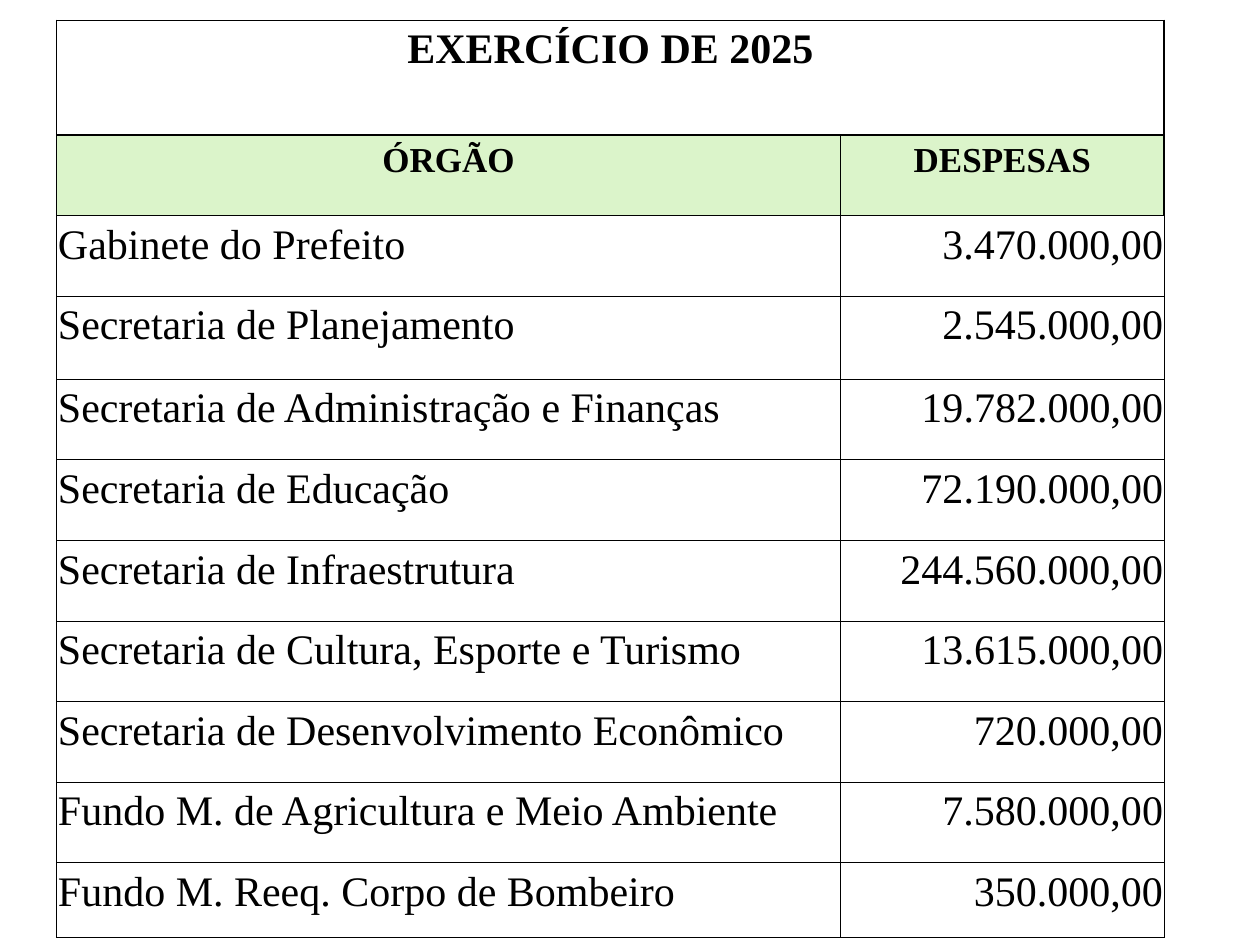
from lxml.etree import SubElement
from pptx import Presentation
from pptx.dml.color import RGBColor
from pptx.enum.text import PP_ALIGN as Align
from pptx.oxml.ns import qn
from pptx.util import Inches, Pt

TITLE = "EXERCÍCIO DE 2025"
HEADS = ("ÓRGÃO", "DESPESAS")
COSTS = [
    ("Gabinete do Prefeito", "3.470.000,00"),
    ("Secretaria de Planejamento", "2.545.000,00"),
    ("Secretaria de Administração e Finanças", "19.782.000,00"),
    ("Secretaria de Educação", "72.190.000,00"),
    ("Secretaria de Infraestrutura", "244.560.000,00"),
    ("Secretaria de Cultura, Esporte e Turismo", "13.615.000,00"),
    ("Secretaria de Desenvolvimento Econômico", "720.000,00"),
    ("Fundo M. de Agricultura e Meio Ambiente", "7.580.000,00"),
    ("Fundo M. Reeq. Corpo de Bombeiro", "350.000,00"),
]
FONT, BLACK, GREEN = "Times New Roman", "000000", "DBF4CA"
THIN, THICK = 0.5, 0.96
LEFT, TOP = 0.45, 0.16
COLS = (6.22, 2.57)
STEP = 0.64
ROWS = [0.91, STEP, STEP, 0.66] + [STEP] * 6 + [0.59]


def rgb(code):
    return RGBColor.from_string(code)


def edge(cell, **widths):
    """Draw the cell's borders; L, R, T and B give widths in points."""
    props = cell._tc.get_or_add_tcPr()
    for side in "LRTB":
        width = Pt(widths.get(side, THIN))
        line = SubElement(props, qn(f"a:ln{side}"), w=str(int(width)))
        paint = SubElement(line, qn("a:solidFill"))
        SubElement(paint, qn("a:srgbClr"), val=BLACK)


def write(cell, text, size=24, bold=False, align=Align.LEFT, fill=None):
    cell.margin_left = cell.margin_right = Inches(0.01)
    cell.margin_top = cell.margin_bottom = Inches(0.05)
    if fill:
        cell.fill.solid()
        cell.fill.fore_color.rgb = rgb(fill)
    else:
        cell.fill.background()
    para = cell.text_frame.paragraphs[0]
    para.alignment = align
    if text:
        run = para.add_run()
        run.text = text
        font = run.font
        font.name, font.size, font.bold = FONT, Pt(size), bold
        font.color.rgb = rgb(BLACK)


deck = Presentation()
deck.slide_width, deck.slide_height = Inches(10), Inches(7.5)
slide = deck.slides.add_slide(deck.slide_layouts[6])
table = slide.shapes.add_table(
    len(ROWS), len(COLS), Inches(LEFT), Inches(TOP),
    Inches(sum(COLS)), Inches(sum(ROWS))).table
table.first_row = table.horz_banding = False
for col, width in zip(table.columns, COLS):
    col.width = Inches(width)
for row, height in zip(table.rows, ROWS):
    row.height = Inches(height)

table.cell(0, 0).merge(table.cell(0, 1))
for c, text in enumerate((TITLE, "")):
    cell = table.cell(0, c)
    edge(cell, R=THICK, B=THICK)
    write(cell, text, bold=True, align=Align.CENTER)

for c, text in enumerate(HEADS):
    cell = table.cell(1, c)
    edge(cell, **dict.fromkeys("LRTB", THICK))
    write(cell, text, size=20, bold=True, align=Align.CENTER, fill=GREEN)

for r, pair in enumerate(COSTS, start=2):
    for c, text in enumerate(pair):
        cell = table.cell(r, c)
        edge(cell, T=THICK if r == 2 else THIN)
        write(cell, text, align=(Align.LEFT, Align.RIGHT)[c])

deck.save("out.pptx")
